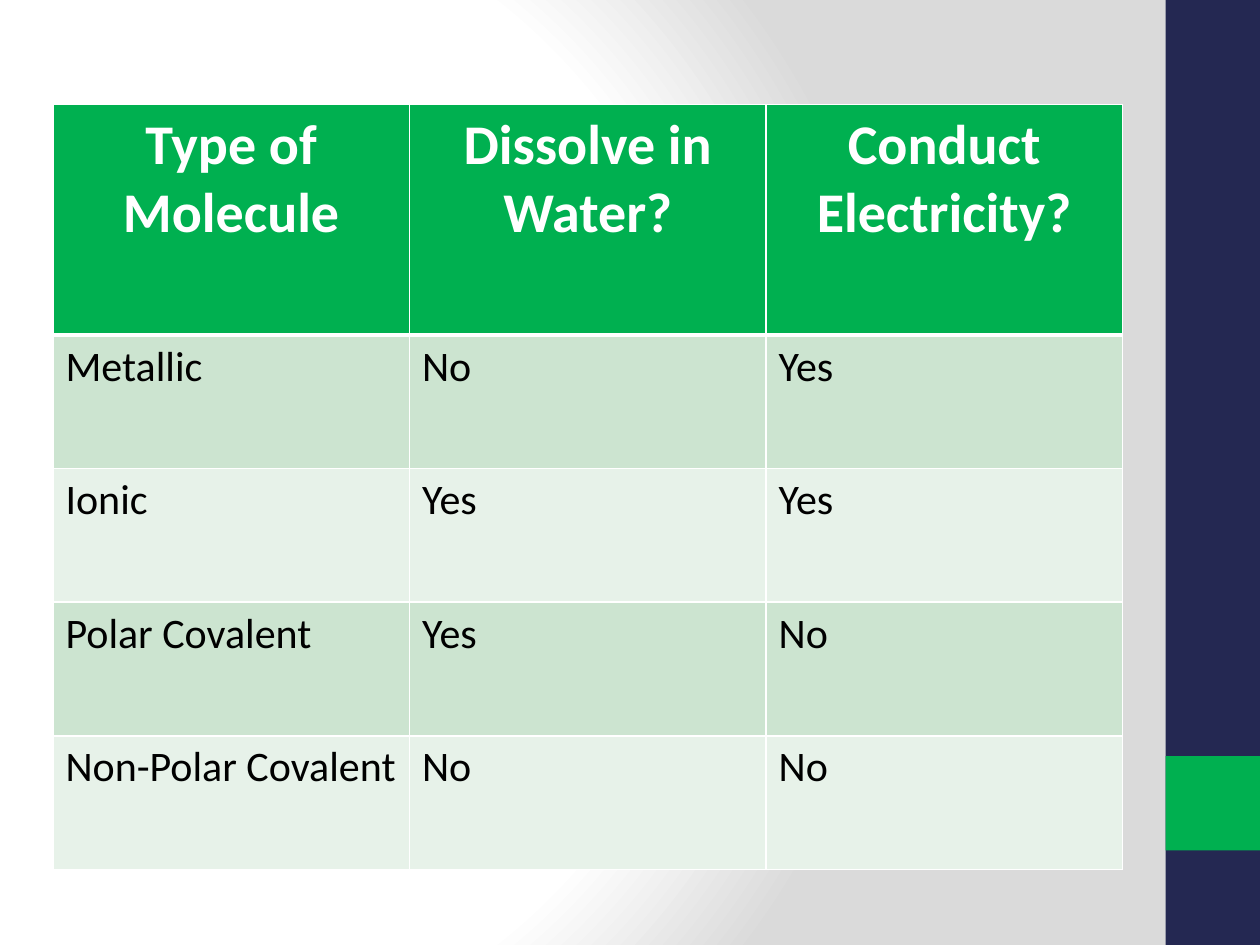
from pptx import Presentation
from pptx.dml.color import RGBColor
from pptx.enum.shapes import MSO_SHAPE
from pptx.enum.text import PP_ALIGN
from pptx.oxml import parse_xml
from pptx.oxml.ns import nsdecls, qn
from pptx.util import Inches, Pt

RECTANGLE = MSO_SHAPE.RECTANGLE
CENTER = PP_ALIGN.CENTER
LEFT = PP_ALIGN.LEFT

COLORS = {
    "white": "FFFFFF",
    "black": "000000",
    "gray": "DADADA",
    "navy": "242852",
    "green": "00B050",
    "band_dark": "CCE4D0",
    "band_light": "E7F2E9",
}

HEADER = ["Type of Molecule", "Dissolve in Water?", "Conduct Electricity?"]
MOLECULES = [
    ["Metallic", "No", "Yes"],
    ["Ionic", "Yes", "Yes"],
    ["Polar Covalent", "Yes", "No"],
    ["Non-Polar Covalent", "No", "No"],
]


def write_text(text_frame, text, size=24, color="black", bold=False, align=LEFT):
    paragraph = text_frame.paragraphs[0]
    paragraph.alignment = align
    run = paragraph.add_run()
    run.text = text
    run.font.name = "Calibri"
    run.font.size = Pt(size)
    run.font.bold = bold
    run.font.color.rgb = RGBColor.from_string(COLORS[color])


class SlideBuilder:
    """Holds the style and the current slide, and draws each kind of element."""

    def __init__(self, slide, colors):
        self.slide = slide
        self.colors = colors

    def fill(self, target, color):
        target.fill.solid()
        target.fill.fore_color.rgb = RGBColor.from_string(self.colors[color])

    def background(self, stops):
        self.slide.background.fill.solid()
        solid = self.slide.element.find(".//" + qn("p:bgPr")).find(qn("a:solidFill"))
        stop_xml = "".join(
            f'<a:gs pos="{percent * 1000}"><a:srgbClr val="{self.colors[color]}"/></a:gs>'
            for percent, color in stops
        )
        gradient = parse_xml(
            f'<a:gradFill {nsdecls("a")} rotWithShape="1"><a:gsLst>{stop_xml}</a:gsLst>'
            '<a:path path="circle">'
            '<a:fillToRect l="20000" t="50000" r="100000" b="50000"/>'
            "</a:path></a:gradFill>"
        )
        solid.getparent().replace(solid, gradient)

    def rectangle(self, left, top, width, height, color):
        shape = self.slide.shapes.add_shape(
            RECTANGLE, Inches(left), Inches(top), Inches(width), Inches(height)
        )
        shape.shadow.inherit = False
        self.fill(shape, color)
        shape.line.fill.background()

    def borders(self, cell, widths):
        properties = cell._tc.get_or_add_tcPr()
        for index, (side, width) in enumerate(widths.items()):
            line = parse_xml(
                f'<a:{side} {nsdecls("a")} w="{Pt(width)}"><a:solidFill>'
                f'<a:srgbClr val="{self.colors["white"]}"/></a:solidFill></a:{side}>'
            )
            properties.insert(index, line)

    def table(self, left, top, column_width, row_heights, rows):
        table = self.slide.shapes.add_table(
            len(rows), len(rows[0]), Inches(left), Inches(top),
            Inches(column_width * len(rows[0])), Inches(sum(row_heights)),
        ).table
        for column in table.columns:
            column.width = Inches(column_width)
        for row_index, values in enumerate(rows):
            table.rows[row_index].height = Inches(row_heights[row_index])
            is_header = row_index == 0
            band = "band_dark" if row_index % 2 else "band_light"
            text_format = (
                {"size": 32, "color": "white", "bold": True, "align": CENTER}
                if is_header else {}
            )
            widths = {
                "lnL": 1, "lnR": 1,
                "lnT": 3 if row_index == 1 else 1,
                "lnB": 3 if is_header else 1,
            }
            for column_index, value in enumerate(values):
                cell = table.cell(row_index, column_index)
                self.fill(cell, "green" if is_header else band)
                self.borders(cell, widths)
                write_text(cell.text_frame, value, **text_format)


def main():
    presentation = Presentation()
    presentation.slide_width = Inches(10)
    presentation.slide_height = Inches(7.5)
    slide = presentation.slides.add_slide(presentation.slide_layouts[6])
    builder = SlideBuilder(slide, COLORS)
    builder.background([(0, "white"), (75, "white"), (100, "gray")])
    builder.rectangle(9.25, 0, 0.75, 7.5, "navy")
    builder.rectangle(9.25, 6, 0.75, 0.75, "green")
    row_heights = [1.83] + [1.06] * len(MOLECULES)
    builder.table(0.42, 0.83, 2.83, row_heights, [HEADER] + MOLECULES)
    presentation.save("out.pptx")


if __name__ == "__main__":
    main()
